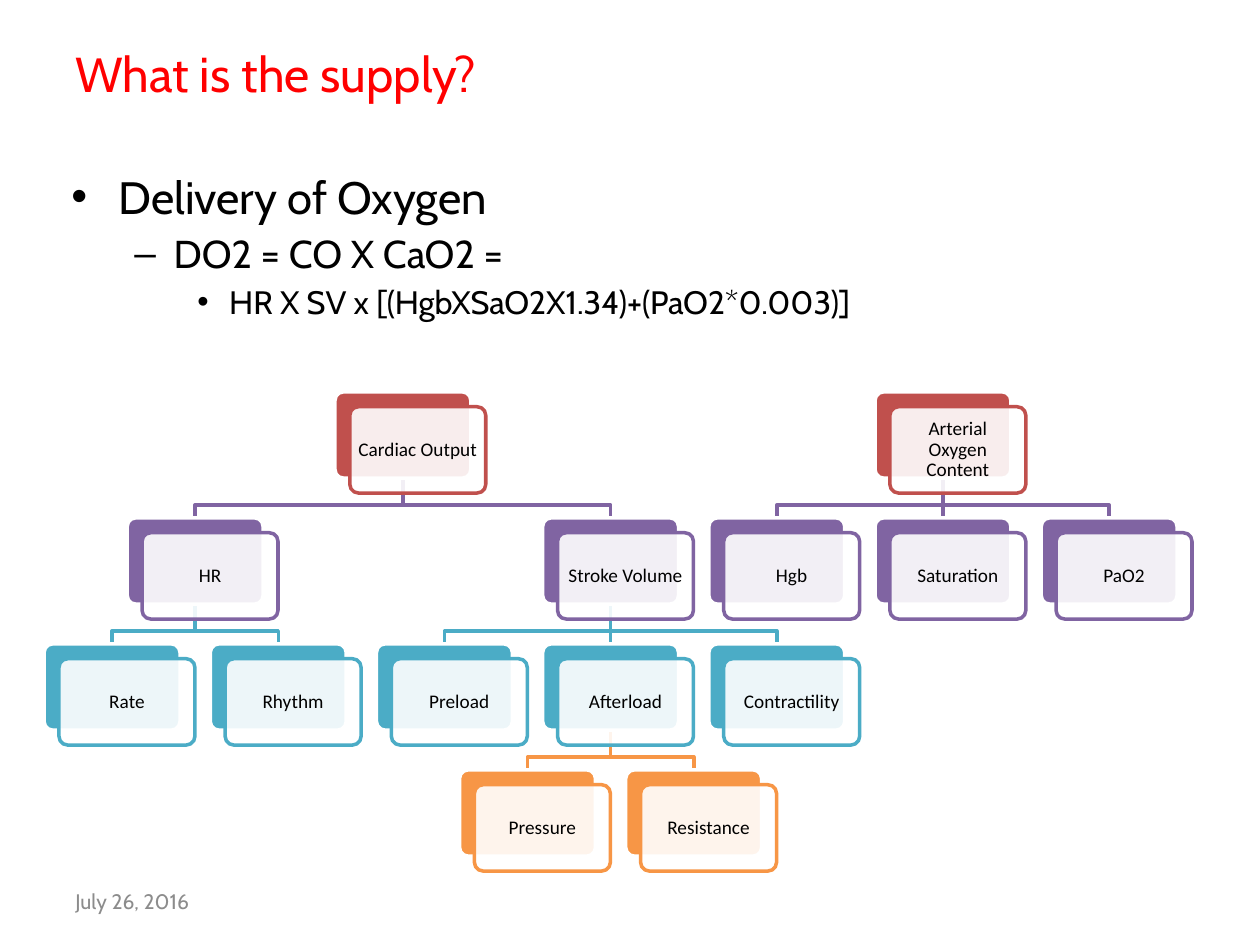
from lxml import etree
from pptx import Presentation
from pptx.dml.color import RGBColor
from pptx.enum.shapes import MSO_CONNECTOR, MSO_SHAPE
from pptx.enum.text import MSO_ANCHOR, PP_ALIGN
from pptx.oxml.ns import qn
from pptx.util import Cm, Pt

BLACK = RGBColor(0x00, 0x00, 0x00)
WHITE = RGBColor(0xFF, 0xFF, 0xFF)
RED = RGBColor(0xFF, 0x00, 0x00)
GREY = RGBColor(0x8C, 0x8C, 0x8C)
LEVEL_COLORS = [
    RGBColor(0xC0, 0x50, 0x4D),
    RGBColor(0x80, 0x64, 0xA2),
    RGBColor(0x4B, 0xAC, 0xC6),
    RGBColor(0xF7, 0x96, 0x46),
]

# Card and grid measures of the tree
CARD_W, CARD_H, CARD_SHIFT = Cm(2.74), Cm(1.74), Cm(0.3)
COLUMN_STEP, ROW_STEP = Cm(3.35), Cm(2.54)
ELBOW_DROP = Cm(0.54)

# Each factor: label, column, factors it depends on
SUPPLY_TREE = [
    ("Cardiac Output", 1.75, [
        ("HR", 0.5, [("Rate", 0, []), ("Rhythm", 1, [])]),
        ("Stroke Volume", 3, [
            ("Preload", 2, []),
            ("Afterload", 3, [("Pressure", 2.5, []), ("Resistance", 3.5, [])]),
            ("Contractility", 4, []),
        ]),
    ]),
    ("Arterial Oxygen Content", 5, [
        ("Hgb", 4, []), ("Saturation", 5, []), ("PaO2", 6, []),
    ]),
]

# Text, size, bullet, left margin and hanging indent in cm
FORMULA_LINES = [
    ("Delivery of Oxygen", 25.9, "•", 0.95, 0.95),
    ("DO2 = CO X CaO2 =", 22.2, "–", 2.06, 0.79),
    ("HR X SV x [(HgbXSaO2X1.34)+(PaO2*0.003)]", 18.5, "•", 3.18, 0.64),
]


def style_font(paragraph, name, size, color):
    paragraph.font.name = name
    paragraph.font.size = Pt(size)
    paragraph.font.color.rgb = color


def add_line_of_text(slide, left, top, width, height, text, size, color, anchor):
    frame = slide.shapes.add_textbox(left, top, width, height).text_frame
    frame.word_wrap = True
    frame.vertical_anchor = anchor
    frame.text = text
    style_font(frame.paragraphs[0], "Cabin", size, color)


def add_formula(slide, left, top, width, height):
    frame = slide.shapes.add_textbox(left, top, width, height).text_frame
    frame.word_wrap = True
    for level, (text, size, bullet, margin, hanging) in enumerate(FORMULA_LINES):
        line = frame.add_paragraph() if level else frame.paragraphs[0]
        line.text = text
        line.level = level
        if level:
            line.space_before = Pt(3.5)
        properties = line._p.get_or_add_pPr()
        properties.set("marL", str(Cm(margin)))
        properties.set("indent", str(-Cm(hanging)))
        etree.SubElement(properties, qn("a:buFont")).set("typeface", "Arial")
        etree.SubElement(properties, qn("a:buChar")).set("char", bullet)
        style_font(line, "Cabin", size, BLACK)


def add_plate(group, left, top, fill, outline):
    plate = group.shapes.add_shape(
        MSO_SHAPE.ROUNDED_RECTANGLE, left, top, CARD_W, CARD_H)
    plate.adjustments[0] = 0.1
    plate.shadow.inherit = False
    plate.fill.solid()
    plate.fill.fore_color.rgb = fill
    plate.line.color.rgb = outline
    plate.line.width = Pt(2)
    return plate


def add_card(group, left, top, label, color):
    """Coloured plate with a translucent labelled card in front; returns the plate."""
    plate = add_plate(group, left, top, color, WHITE)
    card = add_plate(group, left + CARD_SHIFT, top + CARD_SHIFT, WHITE, color)
    white_fill = card._element.spPr.find(qn("a:solidFill"))[0]
    etree.SubElement(white_fill, qn("a:alpha")).set("val", "90000")

    frame = card.text_frame
    frame.word_wrap = True
    frame.vertical_anchor = MSO_ANCHOR.MIDDLE
    frame.margin_left = frame.margin_right = Cm(0.12)
    frame.margin_top = frame.margin_bottom = Cm(0.12)
    frame.text = label
    paragraph = frame.paragraphs[0]
    paragraph.alignment = PP_ALIGN.CENTER
    paragraph.line_spacing = 0.9
    style_font(paragraph, "Calibri", 11, BLACK)
    return plate


def add_link(group, parent, child, color):
    """Line from the parent's bottom to the child's top, behind all cards."""
    start_x, start_y = parent.left + CARD_W // 2, parent.top + CARD_H
    end_x, end_y = child.left + CARD_W // 2, child.top
    if start_x == end_x:
        link = group.shapes.add_connector(
            MSO_CONNECTOR.STRAIGHT, start_x, start_y, end_x, end_y)
        link.begin_connect(parent, 2)
        link.end_connect(child, 0)
        etree.SubElement(link._element.spPr, qn("a:effectLst"))
    else:
        bend_y = start_y + ELBOW_DROP
        elbow = group.shapes.build_freeform(start_x, start_y)
        elbow.add_line_segments(
            [(start_x, bend_y), (end_x, bend_y), (end_x, end_y)], close=False)
        link = elbow.convert_to_shape()
        link.fill.background()
        link.shadow.inherit = False
    link.line.color.rgb = color
    link.line.width = Pt(2)
    group._element.insert(2, link._element)


def add_factors(group, left, top, factors, level=0, parent=None):
    color = LEVEL_COLORS[level]
    for label, column, parts in factors:
        plate = add_card(group, left + int(column * COLUMN_STEP),
                         top + level * ROW_STEP, label, color)
        if parent is not None:
            add_link(group, parent, plate, color)
        add_factors(group, left, top, parts, level + 1, plate) if parts else None


def main():
    deck = Presentation()
    deck.slide_width, deck.slide_height = Cm(25.4), Cm(19.05)
    slide = deck.slides.add_slide(deck.slide_layouts[6])

    # Title
    add_line_of_text(slide, Cm(1.27), Cm(0.76), Cm(22.86), Cm(3.18),
                     "What is the supply?", 28, RED, MSO_ANCHOR.TOP)
    # Oxygen delivery formula
    add_formula(slide, Cm(1.19), Cm(3.28), Cm(22.86), Cm(3.4))
    # Date
    add_line_of_text(slide, Cm(1.27), Cm(17.65), Cm(5.92), Cm(1.02),
                     "July 26, 2016", 12, GREY, MSO_ANCHOR.MIDDLE)
    # Tree of supply factors
    add_factors(slide.shapes.add_group_shape(), Cm(0.89), Cm(7.9), SUPPLY_TREE)

    deck.save("out.pptx")


if __name__ == "__main__":
    main()
